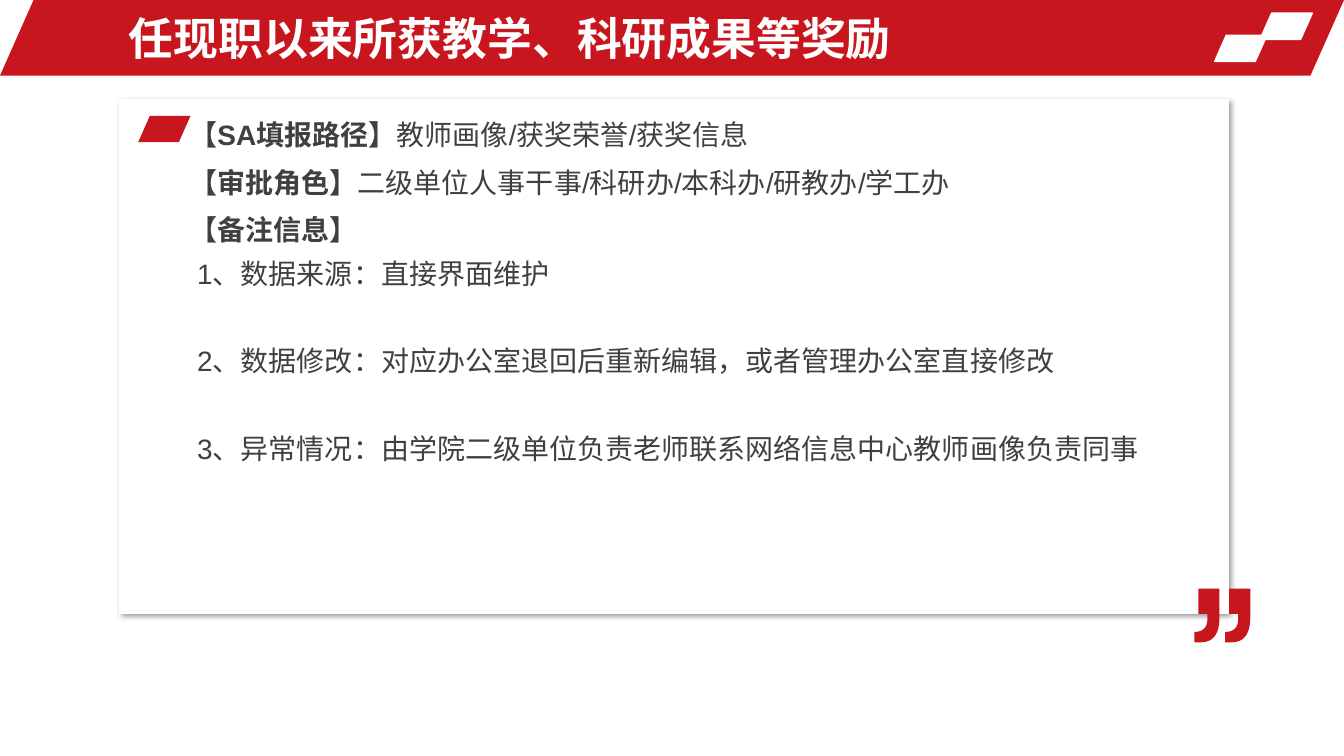
from lxml.etree import SubElement
from pptx import Presentation
from pptx.dml.color import RGBColor
from pptx.enum.shapes import MSO_SHAPE as Preset
from pptx.enum.text import MSO_ANCHOR as Anchor
from pptx.oxml.ns import qn
from pptx.util import Pt

COLORS = {"red": "C8161E", "white": "FFFFFF", "ink": "404040", "shadow": "000000"}
FONT = "Arial"
SLANT = 0.444
TILE_WIDTH, TILE_HEIGHT = 37.4, 18.7
ENTRIES = [
    ("【SA填报路径】", "教师画像/获奖荣誉/获奖信息"),
    ("【审批角色】", "二级单位人事干事/科研办/本科办/研教办/学工办"),
    ("【备注信息】", ""),
]
REMARKS = [
    "1、数据来源：直接界面维护",
    "2、数据修改：对应办公室退回后重新编辑，或者管理办公室直接修改",
    "3、异常情况：由学院二级单位负责老师联系网络信息中心教师画像负责同事",
]


def color(name):
    """Return the named colour."""
    return RGBColor.from_string(COLORS[name])


def add_block(page, preset, box, fill, adjustment, outlined=False):
    """Add a filled preset shape in a box of points."""
    shape = page.shapes.add_shape(preset, *map(Pt, box))
    shape.adjustments[0] = adjustment
    shape.shadow.inherit = False
    shape.fill.solid()
    shape.fill.fore_color.rgb = color(fill)
    if outlined:
        shape.line.color.rgb = color(fill)
        shape.line.width = Pt(1)
    else:
        shape.line.fill.background()
    return shape


def add_text_frame(page, box):
    """Add a wrapping text box and return its frame."""
    frame = page.shapes.add_textbox(*map(Pt, box)).text_frame
    frame.word_wrap = True
    return frame


def style(font, size, name, bold=None):
    """Set size, colour, typeface and weight of a font."""
    font.size = Pt(size)
    font.name = FONT
    font.color.rgb = color(name)
    font.bold = bold


def add_header(page, box, title):
    """Draw the banner with its title and two white tiles."""
    left, top, width, height = box
    add_block(page, Preset.PARALLELOGRAM, box, "red", SLANT)
    right = left + width
    for inset, drop in ((60, 9.4), (92.4, 25.2)):
        tile = (right - inset, top + drop, TILE_WIDTH, TILE_HEIGHT)
        add_block(page, Preset.PARALLELOGRAM, tile, "white", SLANT, outlined=True)
    frame = add_text_frame(page, (left + 85, top + 3.6, 720, height - 7.2))
    frame.vertical_anchor = Anchor.MIDDLE
    para = frame.paragraphs[0]
    para.text = title
    style(para.font, 32, "white", True)


def add_shadow(shape):
    """Give a shape a soft shadow to the lower right."""
    effects = shape._element.spPr.find(qn("a:effectLst"))
    shadow = SubElement(effects, qn("a:outerShdw"), blurRad=str(Pt(4)),
                        dist=str(Pt(3)), dir="2700000", algn="tl", rotWithShape="0")
    tint = SubElement(shadow, qn("a:srgbClr"), val=COLORS["shadow"])
    SubElement(tint, qn("a:alpha"), val="40000")


def curve(start, first, second, end, steps=12):
    """Return points along a cubic curve, without its start."""
    points = []
    for step in range(1, steps + 1):
        t = step / steps
        weights = ((1 - t) ** 3, 3 * t * (1 - t) ** 2, 3 * t * t * (1 - t), t ** 3)
        points.append(tuple(
            sum(weight * value for weight, value in zip(weights, axis))
            for axis in zip(start, first, second, end)))
    return points


def add_quote(page, box):
    """Draw a closing double quotation mark."""
    left, top, width, height = box
    mark = 18
    outline = [(18, 0), (18, 20.2)]
    outline += curve((18, 20.2), (18, 32.4), (13.7, height), (4.3, height))
    outline += [(0, height), (0, 31)]
    outline += curve((0, 31), (6.5, 31), (9.4, 27.4), (9.4, 21.6))
    outline += [(9.4, 18), (2.9, 18), (2.9, 0)]
    builder = None
    for start in (left, left + width - mark):
        points = [(Pt(start + x), Pt(top + y)) for x, y in outline]
        if builder is None:
            builder = page.shapes.build_freeform(*points[0])
        else:
            builder.move_to(*points[0])
        builder.add_line_segments(points[1:], close=True)
    shape = builder.convert_to_shape()
    shape.shadow.inherit = False
    shape.fill.solid()
    shape.fill.fore_color.rgb = color("red")
    shape.line.fill.background()


def add_entry(frame, label, value):
    """Write a bold label followed by its plain value."""
    para = frame.paragraphs[0]
    para.line_spacing = 1.3
    for text, bold in ((label, True), (value, False)):
        if text:
            span = para.add_run()
            span.text = text
            style(span.font, 20, "ink", bold)


def add_remark(frame, text, gap):
    """Write an indented remark below a gap."""
    para = frame.add_paragraph()
    para.text = text
    para._p.get_or_add_pPr().set("marL", str(Pt(5.6)))
    para.line_spacing = 1.3
    para.space_before = Pt(gap)
    style(para.font, 20, "ink", False)


def add_card(page, box):
    """Draw the shadowed card with its marker, entries and remarks."""
    left, top, width, height = box
    add_shadow(add_block(page, Preset.ROUNDED_RECTANGLE, box, "white", 0))
    add_quote(page, (left + width - 24.6, top + height - 18.1, 40, 38.4))
    marker = (left + 13.7, top + 12.2, TILE_WIDTH, TILE_HEIGHT)
    add_block(page, Preset.PARALLELOGRAM, marker, "red", SLANT)
    for index, (label, value) in enumerate(ENTRIES):
        entry_box = (left + 43.2, top + 2.9 + 33.8 * index, 700, 39)
        frame = add_text_frame(page, entry_box)
        add_entry(frame, label, value)
    for index, remark in enumerate(REMARKS):
        add_remark(frame, remark, 31.2 if index else 0)


def main():
    """Build and save the slide."""
    deck = Presentation()
    deck.slide_width, deck.slide_height = Pt(960), Pt(540)
    page = deck.slides.add_slide(deck.slide_layouts[6])
    add_header(page, (0, 0, 960, 54), "任现职以来所获教学、科研成果等奖励")
    add_card(page, (85, 70.6, 792.7, 367.9))
    deck.save("out.pptx")


if __name__ == "__main__":
    main()
